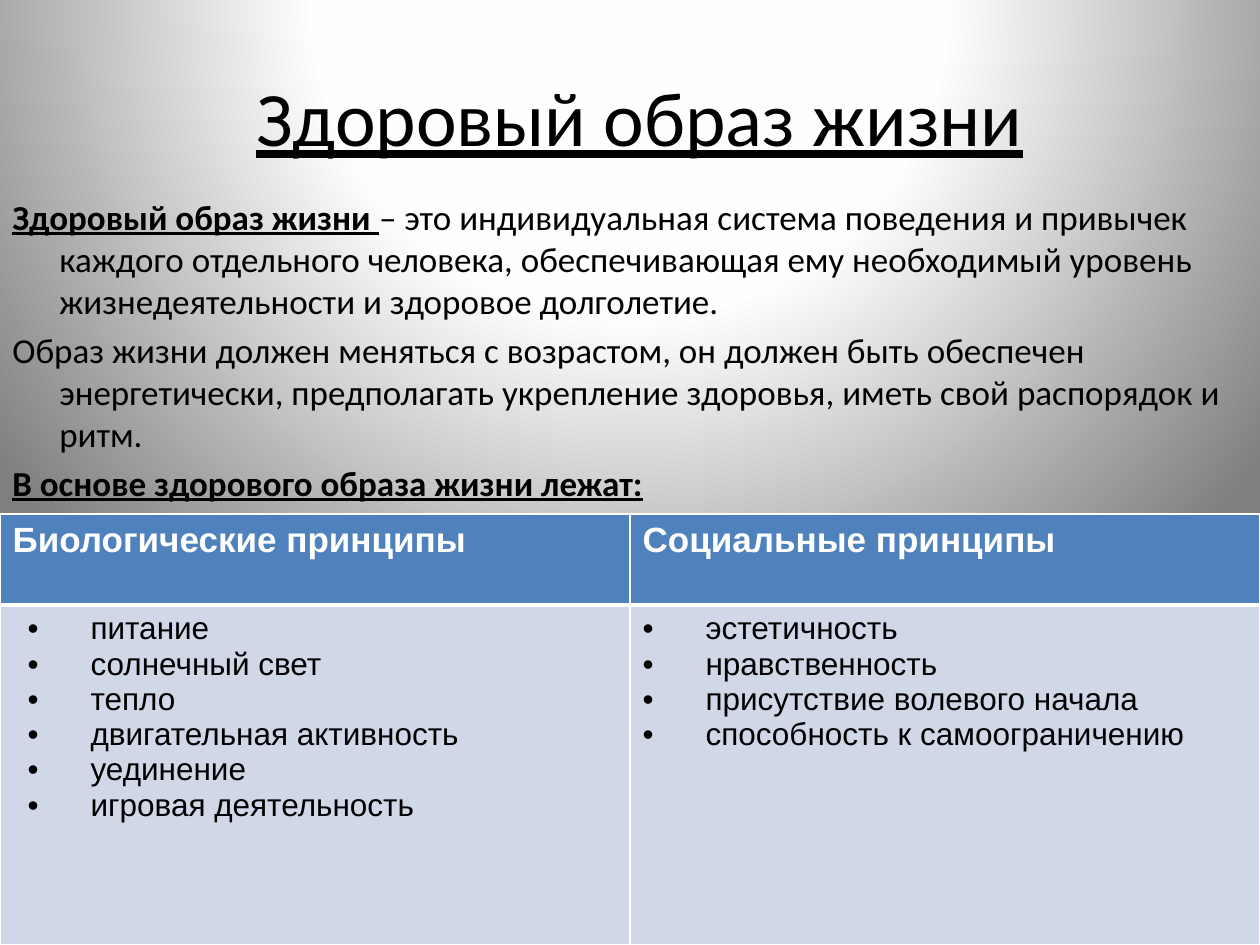
from lxml import etree
from pptx import Presentation
from pptx.dml.color import RGBColor
from pptx.enum.text import MSO_ANCHOR, PP_ALIGN
from pptx.oxml import parse_xml
from pptx.oxml.ns import nsdecls, qn
from pptx.util import Pt

MIDDLE, CENTER = MSO_ANCHOR.MIDDLE, PP_ALIGN.CENTER

EMU_PER_PX = 914400 / 126
SLIDE_W, SLIDE_H = 1260, 945

BLACK = RGBColor(0x00, 0x00, 0x00)
WHITE = RGBColor(0xFF, 0xFF, 0xFF)
HEADER_BLUE = RGBColor(0x4F, 0x81, 0xBD)
PALE_BLUE = RGBColor(0xD0, 0xD8, 0xE8)
GLOW_STOPS = [(0, WHITE), (40, RGBColor(0xFE, 0xFE, 0xFE)),
              (100, RGBColor(0x7F, 0x7F, 0x7F))]

TITLE = "Здоровый образ жизни"
# Each paragraph is a list of (text, emphasised)
DEFINITION = [
    [("Здоровый образ жизни ", True),
     ("– это индивидуальная система поведения и привычек каждого отдельного "
      "человека, обеспечивающая ему необходимый уровень жизнедеятельности и "
      "здоровое долголетие.", False)],
    [("Образ жизни должен меняться с возрастом, он должен быть обеспечен "
      "энергетически, предполагать укрепление здоровья, иметь свой распорядок "
      "и ритм.", False)],
    [("В основе здорового образа жизни лежат:", True)],
]
# Heading, bullet text indent in px, items
PRINCIPLES = [
    ("Биологические принципы", 78,
     ["питание", "солнечный свет", "тепло", "двигательная активность",
      "уединение", "игровая деятельность"]),
    ("Социальные принципы", 63,
     ["эстетичность", "нравственность", "присутствие волевого начала",
      "способность к самоограничению"]),
]


def px(length):
    return round(length * EMU_PER_PX)


def format_span(span, font, size, color, bold=False, underline=False):
    span.font.name = font
    span.font.size = Pt(size)
    span.font.color.rgb = color
    span.font.bold = bold
    span.font.underline = underline


def hang(para, left, hanging, bullet=None):
    """Give a paragraph a hanging indent and, if wanted, a bullet."""
    props = para._p.get_or_add_pPr()
    props.set("marL", str(px(left)))
    props.set("indent", str(-px(hanging)))
    if bullet:
        etree.SubElement(props, qn("a:buFont")).set("typeface", "Arial")
        etree.SubElement(props, qn("a:buChar")).set("char", bullet)


def set_borders(cell, top, bottom):
    """White cell borders, with widths in points."""
    props = cell._tc.get_or_add_tcPr()
    widths = {"lnL": 1, "lnR": 1, "lnT": top, "lnB": bottom}
    for index, (side, width) in enumerate(widths.items()):
        props.insert(index, parse_xml(
            f'<a:{side} {nsdecls("a")} w="{Pt(width)}"><a:solidFill>'
            f'<a:srgbClr val="{WHITE}"/></a:solidFill></a:{side}>'))


def paint_background(page):
    page.background.fill.solid()
    props = page.element.find(".//" + qn("p:bgPr"))
    stops = "".join(f'<a:gs pos="{pos * 1000}"><a:srgbClr val="{color}"/></a:gs>'
                    for pos, color in GLOW_STOPS)
    props.replace(props[0], parse_xml(
        f'<a:gradFill {nsdecls("a")} rotWithShape="1"><a:gsLst>{stops}</a:gsLst>'
        '<a:path path="circle"><a:fillToRect l="50000" t="-80000" r="50000" '
        'b="180000"/></a:path></a:gradFill>'))


def place_title(page, left, top, width, height):
    title = page.shapes.title
    title.left, title.top = px(left), px(top)
    title.width, title.height = px(width), px(height)
    title.text_frame.text = TITLE
    title.text_frame.vertical_anchor = MIDDLE
    para = title.text_frame.paragraphs[0]
    para.alignment = CENTER
    format_span(para.runs[0], "Calibri", 44, BLACK, underline=True)


def place_definition(page, left, top, width, height):
    box = page.shapes.add_textbox(px(left), px(top), px(width), px(height))
    frame = box.text_frame
    frame.word_wrap = True
    for index, parts in enumerate(DEFINITION):
        para = frame.add_paragraph() if index else frame.paragraphs[0]
        para.space_before = Pt(4)
        hang(para, 47, 47)
        for text, strong in parts:
            span = para.add_run()
            span.text = text
            format_span(span, "Calibri", 20, BLACK, strong, strong)


def place_principles(page, left, top, width, height):
    header_height = 91
    table = page.shapes.add_table(2, len(PRINCIPLES), px(left), px(top),
                                  px(width), px(height)).table
    table.horz_banding = False
    table.rows[0].height = px(header_height)
    table.rows[1].height = px(height - header_height)
    for column, (heading, indent, items) in enumerate(PRINCIPLES):
        table.columns[column].width = px(width / len(PRINCIPLES))

        # Heading cell
        header = table.cell(0, column)
        header.fill.solid()
        header.fill.fore_color.rgb = HEADER_BLUE
        set_borders(header, 1, 3)
        header.text_frame.text = heading
        format_span(header.text_frame.paragraphs[0].runs[0], "Arial", 20,
                    WHITE, bold=True)

        # Bulleted cell
        body = table.cell(1, column)
        body.fill.solid()
        body.fill.fore_color.rgb = PALE_BLUE
        set_borders(body, 3, 1)
        body.text_frame.text = "\n".join(items)
        for para in body.text_frame.paragraphs:
            hang(para, indent, 63, "•")
            format_span(para.runs[0], "Arial", 18, BLACK)


def main():
    deck = Presentation()
    deck.slide_width, deck.slide_height = px(SLIDE_W), px(SLIDE_H)
    page = deck.slides.add_slide(deck.slide_layouts[5])
    paint_background(page)
    place_title(page, 73, 42, 1134, 147)
    place_definition(page, 0, 189, SLIDE_W, 756)
    place_principles(page, 0, 514, SLIDE_W, 431)
    deck.save("out.pptx")


if __name__ == "__main__":
    main()
